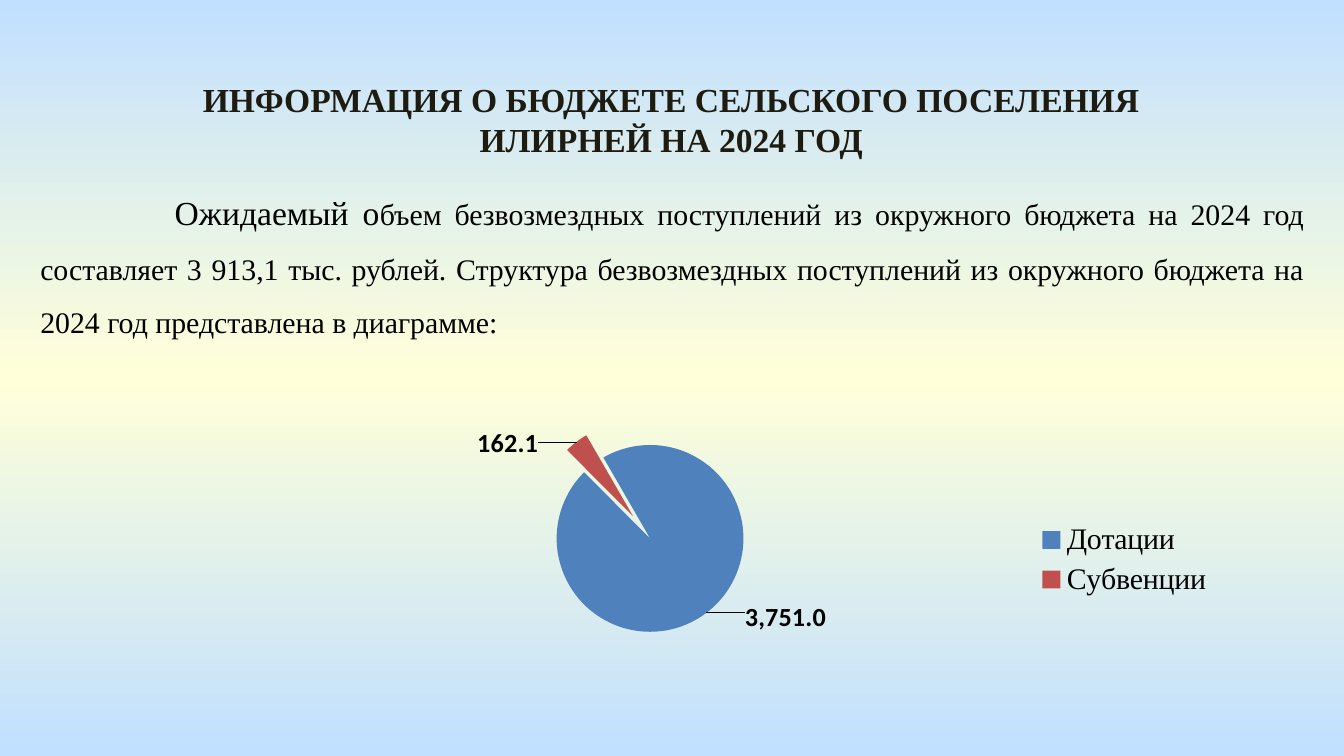
from copy import deepcopy
from dataclasses import dataclass

from pptx import Presentation
from pptx.chart.data import CategoryChartData
from pptx.dml.color import RGBColor
from pptx.enum.chart import XL_CHART_TYPE, XL_LABEL_POSITION, XL_LEGEND_POSITION
from pptx.enum.text import MSO_ANCHOR, MSO_AUTO_SIZE, PP_ALIGN
from pptx.oxml import parse_xml
from pptx.oxml.ns import nsdecls, qn
from pptx.util import Inches, Pt

PIE = XL_CHART_TYPE.PIE
OUTSIDE_END = XL_LABEL_POSITION.OUTSIDE_END
LEGEND_RIGHT = XL_LEGEND_POSITION.RIGHT
CENTER, JUSTIFY = PP_ALIGN.CENTER, PP_ALIGN.JUSTIFY
TOP, MIDDLE = MSO_ANCHOR.TOP, MSO_ANCHOR.MIDDLE
GROW = MSO_AUTO_SIZE.SHAPE_TO_FIT_TEXT


@dataclass(frozen=True)
class Theme:
    sky: str = "C1E0FF"
    cream: str = "FFFFD9"
    heading: str = "1E1C11"
    text: str = "000000"
    slices: tuple = ("4F81BD", "C0504D")
    serif: str = "Times New Roman"
    sans: str = "Calibri"
    large: int = 18
    normal: int = 16
    label: int = 14


THEME = Theme()
WIDTH = Inches(10)
HEIGHT = WIDTH * 9 // 16
TAB_WIDTH = WIDTH // 10

# Left, top, width and height in percent of the slide
TITLE_AREA = (11.3, 9.42, 77.3, 12.62)
BODY_AREA = (2, 21.87, 96.1, 24.18)
CHART_AREA = (8.8, 51.38, 82.5, 45.33)
# The same, in percent of the chart
PLOT_AREA = (37.5, 9.2, 19.4, 62.7)

TITLE = "ИНФОРМАЦИЯ О БЮДЖЕТЕ СЕЛЬСКОГО ПОСЕЛЕНИЯ ИЛИРНЕЙ НА 2024 ГОД"
BODY_START = "Ожидаемый о"
BODY_REST = (
    "бъем безвозмездных поступлений из окружного бюджета на 2024 год "
    "составляет 3 913,1 тыс. рублей. Структура безвозмездных поступлений "
    "из окружного бюджета на 2024 год представлена в диаграмме:"
)
TRANSFERS = {"Дотации": 3751, "Субвенции": 162.1}
LABEL_SHIFTS = ((0.03, -0.05), (-0.03, 0.07))
NUMBER_FORMAT = "#,##0.0"
START_ANGLE = 330
EXPLOSION = 15


def on_slide(area):
    sides = (WIDTH, HEIGHT, WIDTH, HEIGHT)
    return [round(percent * side / 100) for percent, side in zip(area, sides)]


def set_font(font, face, size, color=THEME.text, bold=False):
    font.name, font.size, font.bold = face, Pt(size), bold
    font.color.rgb = RGBColor.from_string(color)


def paint_background(slide):
    fill = slide.background.fill
    fill.gradient()
    fill.gradient_angle = 270
    stop_list = slide.element.find(".//" + qn("a:gsLst"))
    stop_list.insert(1, deepcopy(stop_list[0]))
    colors = (THEME.sky, THEME.cream, THEME.sky)
    for stop, position, color in zip(fill.gradient_stops, (0, 0.5, 1), colors):
        stop.position = position
        stop.color.rgb = RGBColor.from_string(color)


def fill_placeholder(placeholder, area, alignment, anchor, runs):
    """Place a one-paragraph placeholder; runs are (text, font settings)."""
    (placeholder.left, placeholder.top,
     placeholder.width, placeholder.height) = on_slide(area)
    frame = placeholder.text_frame
    frame.word_wrap = True
    frame.auto_size = GROW
    frame.vertical_anchor = anchor
    paragraph = frame.paragraphs[0]
    paragraph.alignment = alignment
    paragraph.space_before = Pt(0)
    for text, settings in runs:
        run = paragraph.add_run()
        run.text = text
        set_font(run.font, *settings)
    return paragraph


def make_plain(paragraph):
    """Remove the bullet and its indent, and set the tab width."""
    properties = paragraph._p.get_or_add_pPr()
    properties.set("marL", "0")
    properties.set("indent", "0")
    properties.set("defTabSz", str(TAB_WIDTH))
    properties.append(parse_xml(f"<a:buNone {nsdecls('a')}/>"))


def manual_layout(**values):
    settings = "".join(f'<c:{tag} val="{value}"/>' for tag, value in values.items())
    return parse_xml(
        f"<c:layout {nsdecls('c')}><c:manualLayout>{settings}"
        "</c:manualLayout></c:layout>"
    )


def place_plot(chart):
    plot_area = chart._chartSpace.chart.plotArea
    for layout in plot_area.findall(qn("c:layout")):
        plot_area.remove(layout)
    x, y, w, h = (percent / 100 for percent in PLOT_AREA)
    plot_area.insert(0, manual_layout(
        layoutTarget="inner", xMode="edge", yMode="edge", x=x, y=y, w=w, h=h))


def style_pie(plot):
    plot.vary_by_categories = True
    pie = plot._element
    for angle in pie.findall(qn("c:firstSliceAng")):
        pie.remove(angle)
    pie.append(parse_xml(
        f'<c:firstSliceAng {nsdecls("c")} val="{START_ANGLE}"/>'))
    series = plot.series[0]
    for index, color in enumerate(THEME.slices):
        fill = series.points[index].format.fill
        fill.solid()
        fill.fore_color.rgb = RGBColor.from_string(color)
    first_point = series._element.find(qn("c:dPt"))
    first_point.addprevious(parse_xml(
        f'<c:explosion {nsdecls("c")} val="{EXPLOSION}"/>'))


def label_slices(series):
    labels = series.data_labels
    labels.show_value = True
    labels.number_format = NUMBER_FORMAT
    labels.number_format_is_linked = False
    labels.position = OUTSIDE_END
    set_font(labels.font, THEME.sans, THEME.label, bold=True)
    for index in range(len(LABEL_SHIFTS)):
        label = series.points[index].data_label
        set_font(label.font, THEME.sans, THEME.label, bold=True)
        label.position = OUTSIDE_END
    point_labels = labels._element.findall(qn("c:dLbl"))
    for point_label, (x, y) in zip(point_labels, LABEL_SHIFTS):
        point_label.find(qn("c:idx")).addnext(manual_layout(x=x, y=y))


def add_transfer_chart(slide):
    data = CategoryChartData(number_format=NUMBER_FORMAT)
    data.categories = list(TRANSFERS)
    data.add_series("Series 1", list(TRANSFERS.values()))
    chart = slide.shapes.add_chart(PIE, *on_slide(CHART_AREA), data).chart
    chart.has_title = False
    set_font(chart.font, THEME.sans, THEME.large)
    chart.has_legend = True
    chart.legend.position = LEGEND_RIGHT
    chart.legend.include_in_layout = False
    set_font(chart.legend.font, THEME.serif, THEME.normal)
    place_plot(chart)
    style_pie(chart.plots[0])
    label_slices(chart.plots[0].series[0])


def main():
    presentation = Presentation()
    presentation.slide_width, presentation.slide_height = WIDTH, HEIGHT
    slide = presentation.slides.add_slide(presentation.slide_layouts[1])
    paint_background(slide)
    title, body = slide.placeholders
    fill_placeholder(title, TITLE_AREA, CENTER, MIDDLE, [
        (TITLE, (THEME.serif, THEME.large, THEME.heading, True)),
    ])
    paragraph = fill_placeholder(body, BODY_AREA, JUSTIFY, TOP, [
        ("\t", (THEME.sans, THEME.large)),
        (BODY_START, (THEME.serif, THEME.large)),
        (BODY_REST, (THEME.serif, THEME.normal)),
    ])
    paragraph.line_spacing = 1.5
    make_plain(paragraph)
    add_transfer_chart(slide)
    presentation.save("out.pptx")


if __name__ == "__main__":
    main()
